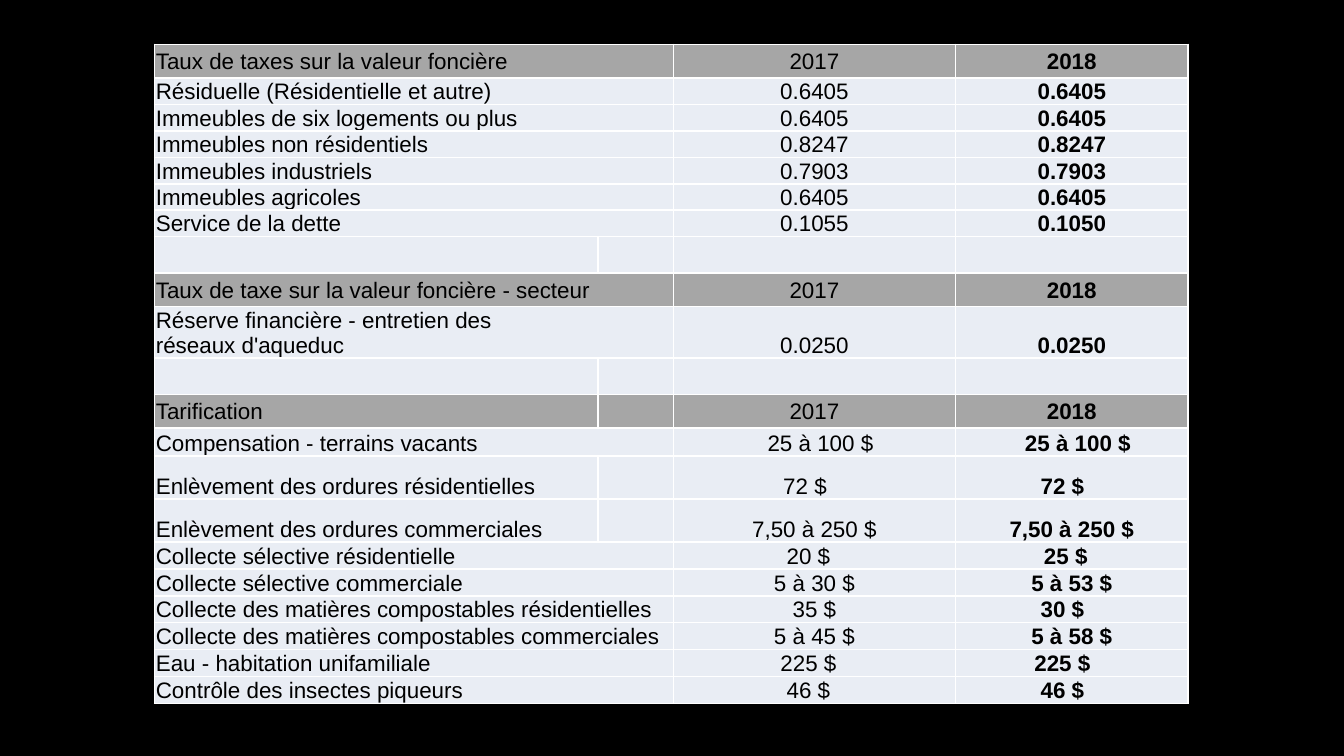
from lxml import etree
from pptx import Presentation
from pptx.dml.color import RGBColor
from pptx.enum.text import MSO_ANCHOR, PP_ALIGN
from pptx.oxml.ns import qn
from pptx.util import Inches, Pt

LEFT, CENTER = PP_ALIGN.LEFT, PP_ALIGN.CENTER
MIDDLE, BOTTOM = MSO_ANCHOR.MIDDLE, MSO_ANCHOR.BOTTOM

HUES = {"back": "000000", "text": "000000", "head": "A6A6A6",
        "body": "E9EDF4", "line": "FFFFFF"}

TAXES = [
    ("Résiduelle (Résidentielle et autre)", "0.6405", "0.6405"),
    ("Immeubles de six logements ou plus", "0.6405", "0.6405"),
    ("Immeubles non résidentiels", "0.8247", "0.8247"),
    ("Immeubles industriels", "0.7903", "0.7903"),
    ("Immeubles agricoles", "0.6405", "0.6405"),
    ("Service de la dette", "0.1055", "0.1050"),
]
SECTOR = [("Réserve financière - entretien des\vréseaux d'aqueduc", "0.0250", "0.0250")]
RATES = [
    ("Compensation - terrains vacants", "25 à 100 $", "25 à 100 $"),
    ("Enlèvement des ordures résidentielles", "72 $", "72 $"),
    ("Enlèvement des ordures commerciales", "7,50 à 250 $", "7,50 à 250 $"),
    ("Collecte sélective résidentielle", "20 $", "25 $"),
    ("Collecte sélective commerciale", "5 à 30 $", "5 à 53 $"),
    ("Collecte des matières compostables résidentielles", "35 $", "30 $"),
    ("Collecte des matières compostables commerciales", "5 à 45 $", "5 à 58 $"),
    ("Eau - habitation unifamiliale", "225 $", "225 $"),
    ("Contrôle des insectes piqueurs", "46 $", "46 $"),
]
PARTS = [
    ("Taux de taxes sur la valeur foncière", TAXES),
    ("Taux de taxe sur la valeur foncière - secteur", SECTOR),
    ("Tarification", RATES),
]
SPLIT = {"Tarification", RATES[1][0], RATES[2][0]}
TALL = {SECTOR[0][0]: 0.38, RATES[0][0]: 0.21, RATES[1][0]: 0.32, RATES[2][0]: 0.32}
SHIFT = {
    RATES[0][0]: (0.09, 0.09),
    RATES[1][0]: (-0.14, -0.14),
    RATES[3][0]: (-0.09, -0.09),
    RATES[5][0]: (0, -0.14),
    RATES[7][0]: (-0.09, -0.14),
    RATES[8][0]: (-0.09, -0.14),
}
WIDTHS = [3.3, 0.56, 2.1, 1.73]
INSET = 0.01


def edge(cell):
    props = cell._tc.get_or_add_tcPr()
    for spot, side in enumerate(("lnL", "lnR", "lnT", "lnB")):
        line = etree.Element(qn(f"a:{side}"), w=str(Pt(1)))
        fill = etree.SubElement(line, qn("a:solidFill"))
        etree.SubElement(fill, qn("a:srgbClr"), val=HUES["line"])
        props.insert(spot, line)


def write(cell, text, fill="body", align=CENTER, anchor=BOTTOM, bold=False, shift=0):
    cell.fill.solid()
    cell.fill.fore_color.rgb = RGBColor.from_string(HUES[fill])
    cell.margin_left = Inches(INSET + max(shift, 0))
    cell.margin_right = Inches(INSET + max(-shift, 0))
    cell.margin_top, cell.margin_bottom = Inches(INSET), 0
    cell.vertical_anchor = anchor
    cell.text = text
    para = cell.text_frame.paragraphs[0]
    para.alignment = align
    for run in para.runs:
        run.font.name, run.font.size, run.font.bold = "Arial", Pt(12), bold
        run.font.color.rgb = RGBColor.from_string(HUES["text"])
    if not text:
        para._p.get_or_add_endParaRPr().set("sz", "1200")
    edge(cell)


rows = []
for title, items in PARTS:
    if rows:
        rows.append(("body", 0.27, ("", "", "")))
    rows.append(("head", 0.25, (title, "2017", "2018")))
    small = 0.2 if items is RATES else 0.19
    rows += [("body", TALL.get(item[0], small), item) for item in items]

deck = Presentation()
deck.slide_width = Inches(10)
deck.slide_height = deck.slide_width * 9 // 16
slide = deck.slides.add_slide(deck.slide_layouts[6])
slide.background.fill.solid()
slide.background.fill.fore_color.rgb = RGBColor.from_string(HUES["back"])

high = sum(row[1] for row in rows)
grid = slide.shapes.add_table(len(rows), len(WIDTHS), Inches(1.15), Inches(0.33),
                              Inches(sum(WIDTHS)), Inches(high)).table
for col, wide in zip(grid.columns, WIDTHS):
    col.width = Inches(wide)

for num, (kind, tall, (label, old, new)) in enumerate(rows):
    grid.rows[num].height = Inches(tall)
    name, gap, past, now = (grid.cell(num, col) for col in range(4))
    anchor = MIDDLE if kind == "head" else BOTTOM
    left, right = SHIFT.get(label, (0, 0))
    write(name, label, fill=kind, align=LEFT, anchor=anchor)
    write(gap, "", fill=kind)
    write(past, old, fill=kind, anchor=anchor, shift=left)
    write(now, new, fill=kind, anchor=anchor, bold=True, shift=right)
    if label and label not in SPLIT:
        name.merge(gap)

deck.save("out.pptx")
